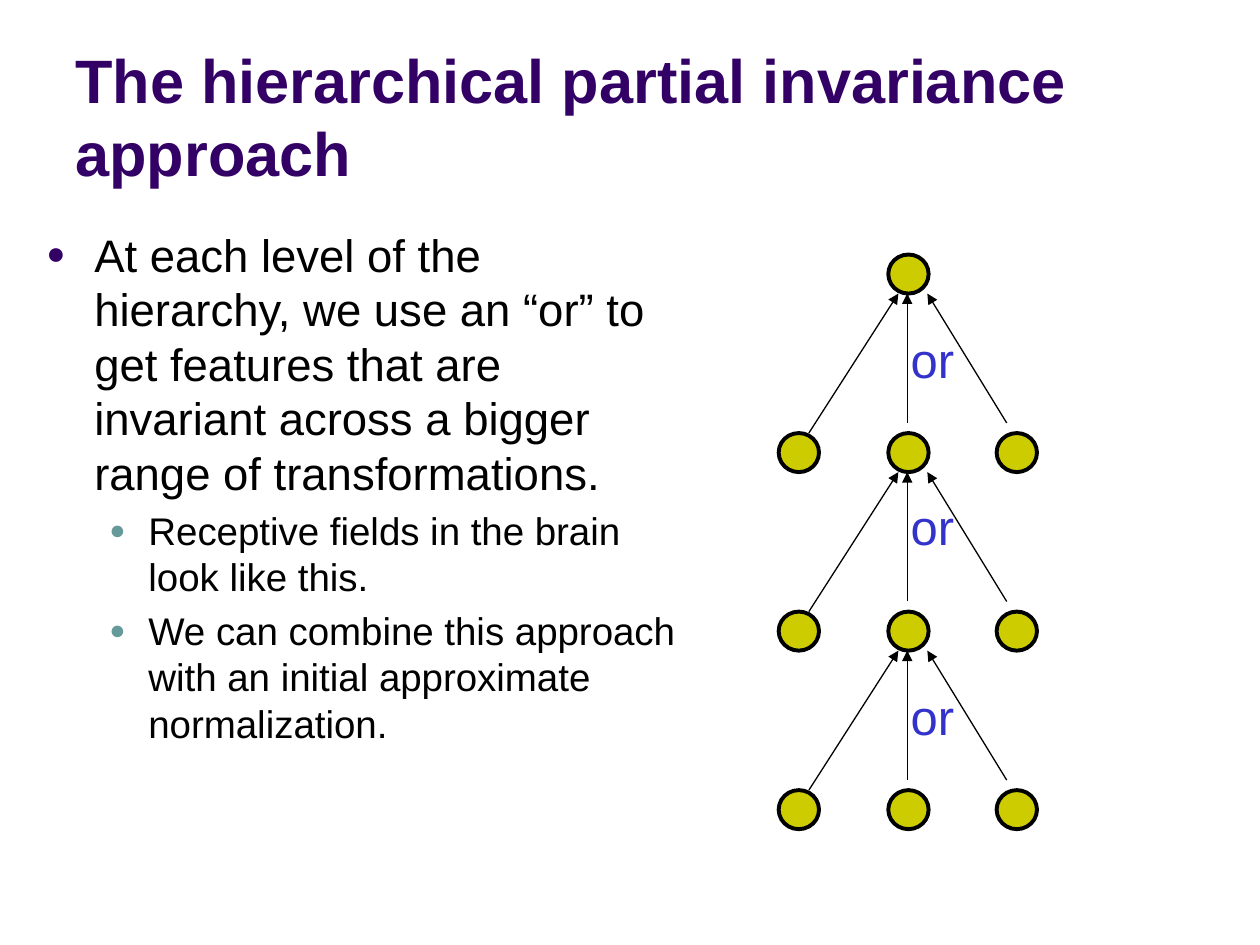
import pptx
import pptx.util
import pptx.dml.color
import pptx.enum.shapes
import pptx.enum.text
import pptx.oxml.ns
import lxml.etree

Inches, Pt = pptx.util.Inches, pptx.util.Pt
RGB = pptx.dml.color.RGBColor.from_string
ANCHOR = pptx.enum.text.MSO_ANCHOR

COLORS = {"title": "330066", "sub_bullet": "669999", "text": "000000",
          "node": "CCCC00", "outline": "000000", "or": "3333CC"}
TITLE = "The hierarchical partial invariance approach"
BODY = [
    (0, "At each level of the hierarchy, we use an “or” to get features that "
        "are invariant across a bigger range of transformations."),
    (1, "Receptive fields in the brain look like this."),
    (1, "We can combine this approach with an initial approximate normalization."),
]
LEVELS = [
    {"size": 26, "left": 0.38, "hang": 0.38, "bullet": "title"},
    {"size": 22, "left": 0.81, "hang": 0.31, "bullet": "sub_bullet"},
]
NODE_W, NODE_H = 0.32, 0.31
COLUMNS = [6.18, 7.05, 7.91]
TOP, ROW_GAP, ROWS = 2.02, 1.417, 4
ARROWS = [(6.42, 0, 7.13), (7.2, -0.08, 7.2), (7.99, -0.08, 7.36)]
OR_TOPS = [2.57, 3.89, 5.4]


def add_xml(parent, tag, **attrs):
    return lxml.etree.SubElement(parent, pptx.oxml.ns.qn(tag), attrs)


def add_text_box(s, left, top, width, height, anchor=ANCHOR.TOP):
    sp = s.shapes.add_textbox(*map(Inches, (left, top, width, height)))
    tf = sp.text_frame
    tf.word_wrap, tf.vertical_anchor = True, anchor
    return tf


def write(p, text, size, color, bold=False):
    r = p.add_run()
    r.text = text
    for name, value in {"name": "Arial", "size": Pt(size), "bold": bold}.items():
        setattr(r.font, name, value)
    r.font.color.rgb = RGB(COLORS[color])


def add_bullet(p, level):
    pPr = p._p.get_or_add_pPr()
    pPr.set("marL", str(Inches(level["left"])))
    pPr.set("indent", str(-Inches(level["hang"])))
    add_xml(add_xml(pPr, "a:buClr"), "a:srgbClr", val=COLORS[level["bullet"]])
    add_xml(pPr, "a:buSzPct", val="70000")
    add_xml(pPr, "a:buFont", typeface="Arial")
    add_xml(pPr, "a:buChar", char="●")


def add_node(s, left, top):
    sp = s.shapes.add_shape(pptx.enum.shapes.MSO_SHAPE.OVAL,
                            *map(Inches, (left, top, NODE_W, NODE_H)))
    sp.shadow.inherit = False
    sp.fill.solid()
    sp.fill.fore_color.rgb = RGB(COLORS["node"])
    sp.line.color.rgb = RGB(COLORS["outline"])
    sp.line.width = Pt(2.25)


def add_arrow(s, x1, y1, x2, y2):
    c = s.shapes.add_connector(pptx.enum.shapes.MSO_CONNECTOR.STRAIGHT,
                               *map(Inches, (x1, y1, x2, y2)))
    c.line.color.rgb = RGB(COLORS["outline"])
    c.line.width = Pt(0.75)
    add_xml(c.line._get_or_add_ln(), "a:tailEnd", type="triangle")
    add_xml(c._element.spPr, "a:effectLst")


def main():
    prs = pptx.Presentation()
    prs.slide_width, prs.slide_height = Inches(10), Inches(7.5)
    s = prs.slides.add_slide(prs.slide_layouts[6])

    tf = add_text_box(s, 0.5, 0.13, 8.25, 1.42, ANCHOR.BOTTOM)
    write(tf.paragraphs[0], TITLE, 35, "title", True)

    tf = add_text_box(s, 0.27, 1.75, 5.2, 5.54)
    for i, (depth, text) in enumerate(BODY):
        level = LEVELS[depth]
        p = tf.add_paragraph() if i else tf.paragraphs[0]
        p.level = depth
        p.space_before = Pt(level["size"] * 0.2)
        add_bullet(p, level)
        write(p, text, level["size"], "text")

    for row in range(ROWS):
        top = TOP + row * ROW_GAP
        for left in COLUMNS if row else COLUMNS[1:2]:
            add_node(s, left, top)
        if row:
            for x1, offset, x2 in ARROWS:
                add_arrow(s, x1, top + offset, x2, top - ROW_GAP + NODE_H)

    for top in OR_TOPS:
        tf = add_text_box(s, 7.13, top, 0.63, 0.57)
        write(tf.paragraphs[0], "or", 28, "or")

    prs.save("out.pptx")


if __name__ == "__main__":
    main()
